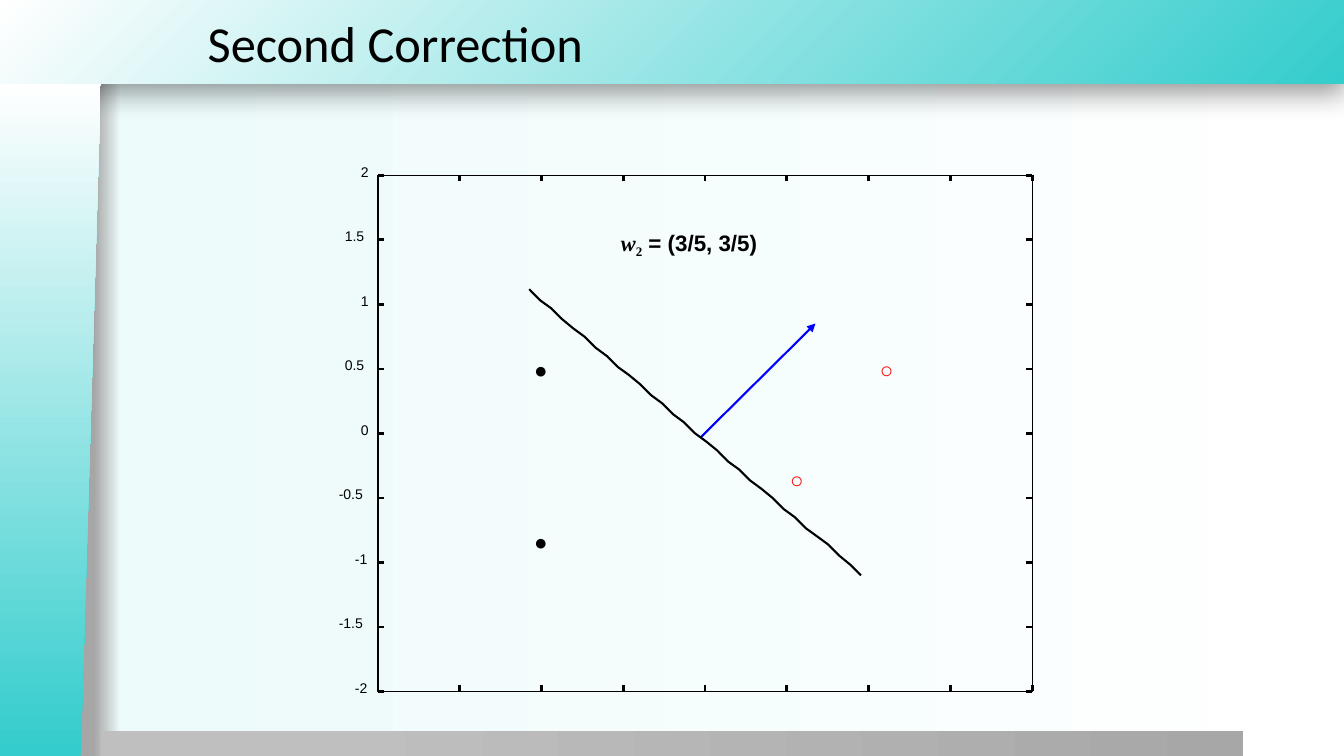
from dataclasses import dataclass

from lxml import etree
from pptx import Presentation
from pptx.dml.color import RGBColor
from pptx.enum.shapes import MSO_CONNECTOR, MSO_SHAPE
from pptx.enum.text import MSO_ANCHOR, MSO_AUTO_SIZE, PP_ALIGN
from pptx.oxml import parse_xml
from pptx.oxml.ns import nsdecls, qn
from pptx.util import Pt

RECT = MSO_SHAPE.RECTANGLE
MANUAL_INPUT = MSO_SHAPE.FLOWCHART_MANUAL_INPUT
STRAIGHT = MSO_CONNECTOR.STRAIGHT
MIDDLE = MSO_ANCHOR.MIDDLE
GROW = MSO_AUTO_SIZE.SHAPE_TO_FIT_TEXT
LEFT = PP_ALIGN.LEFT


@dataclass(frozen=True)
class Theme:
    teal: str = "34CCCC"
    pale: str = "EDFBFB"
    white: str = "FFFFFF"
    edge: str = "A6A6A6"
    foot_start: str = "BFBFBF"
    foot_end: str = "A7A7A7"
    black: str = "000000"
    blue: str = "0000FF"
    red: str = "FF0000"
    title_font: str = "Calibri"
    sans: str = "Arial"
    serif: str = "Times New Roman"
    title_size: int = 36
    body_size: int = 16
    tick_size: int = 10
    line: float = 1.5


T = Theme()
SLIDE_W, SLIDE_H = 960, 540
BANNER_H = 59.8
TICK = 4.3
# Heights of the decision line below the plot's top, at equal steps in x
BOUNDARY = [81.3, 89.3, 95, 102.9, 109.4, 115.2, 123.1, 128.9, 136.8, 142.5, 149,
            156.9, 162.7, 170.6, 176.4, 184.3, 190.1, 196.5, 204.5, 210.2, 218.1,
            223.9, 230.4, 238.3, 244.1, 252, 257.7, 263.5, 271.4, 277.9, 285.8]
MARKERS = [("●", 104.4, 125.3, T.black), ("●", 104.4, 248.4, T.black),
           ("○", 287.3, 203.8, T.red), ("○", 351.4, 125.3, T.red)]


def set_gradient(fill, parent, stops, shade='<a:lin ang="0" scaled="0"/>'):
    fill.gradient()
    old = parent.find(qn("a:gradFill"))
    gs = "".join(f'<a:gs pos="{pos * 1000}"><a:srgbClr val="{color}"/></a:gs>'
                 for pos, color in stops)
    parent.replace(old, parse_xml(
        f'<a:gradFill {nsdecls("a")} rotWithShape="1"><a:gsLst>{gs}</a:gsLst>{shade}</a:gradFill>'))


def add_panel(shapes, kind, box, stops, **shade):
    sp = shapes.add_shape(kind, *map(Pt, box))
    sp.shadow.inherit = False
    sp.line.fill.background()
    set_gradient(sp.fill, sp._element.spPr, stops, **shade)
    return sp


def add_line(shapes, x1, y1, x2, y2, color=T.black, width=0):
    line = shapes.add_connector(STRAIGHT, Pt(x1), Pt(y1), Pt(x2), Pt(y2))
    line.line.color.rgb = RGBColor.from_string(color)
    line.line.width = Pt(width)
    etree.SubElement(line._element.spPr, qn("a:effectLst"))
    return line


def format_run(r, font, size, color=T.black, bold=False, italic=False):
    r.font.name, r.font.size = font, Pt(size)
    r.font.bold, r.font.italic = bold, italic
    r.font.color.rgb = RGBColor.from_string(color)


def add_label(shapes, box, text, font, size, color=T.black, inset=(0, 0)):
    tb = shapes.add_textbox(*map(Pt, box))
    tf = tb.text_frame
    tf.word_wrap = False
    tf.auto_size = GROW
    tf.margin_left = tf.margin_right = Pt(inset[0])
    tf.margin_top = tf.margin_bottom = Pt(inset[1])
    p = tf.paragraphs[0]
    p.text = text
    format_run(p.runs[0], font, size, color)
    return p


def draw_frame(slide, x, y, w, h):
    shapes = slide.shapes
    # Background
    slide.background.fill.solid()
    bg = slide._element.cSld.find(qn("p:bg")).find(qn("p:bgPr"))
    set_gradient(slide.background.fill, bg, [(7, T.edge), (9, T.pale), (100, T.white)])
    # Top banner with its shadow
    fade = [(0, T.teal), (100, T.white)]
    banner = add_panel(
        shapes, RECT, (x, y, w, BANNER_H), fade,
        shade='<a:path path="circle"><a:fillToRect l="100000" t="100000"/></a:path>')
    effects = banner._element.spPr.find(qn("a:effectLst"))
    effects.append(parse_xml(
        f'<a:outerShdw {nsdecls("a")} blurRad="{Pt(20)}" dist="{Pt(6)}" dir="5400000" '
        'algn="t" rotWithShape="0"><a:srgbClr val="000000"><a:alpha val="40000"/>'
        '</a:srgbClr></a:outerShdw>'))
    # Footer bar
    add_panel(shapes, RECT, (x + 72, y + h - 18, w - 144, 18.5),
              [(20, T.foot_start), (100, T.foot_end)])
    # Side panel, turned upright
    side_w, side_h = 72, h - BANNER_H + 0.6
    side = add_panel(shapes, MANUAL_INPUT,
                     (x + (side_w - side_h) / 2, y + BANNER_H + (side_h - side_w) / 2,
                      side_h, side_w), [(1, T.teal), (100, T.white)])
    side.rotation = 270
    side._element.spPr.find(qn("a:xfrm")).set("flipV", "1")


def draw_axes(shapes, x, y, w, h):
    frame = shapes.add_shape(RECT, Pt(x), Pt(y), Pt(w), Pt(h))
    frame.shadow.inherit = False
    frame.fill.background()
    frame.line.color.rgb = RGBColor.from_string(T.black)
    frame.line.width = Pt(0)
    for i in range(9):
        tick_x, tick_y = x + w * i / 8, y + h * i / 8
        add_line(shapes, tick_x, y + h, tick_x, y + h - TICK)
        add_line(shapes, tick_x, y, tick_x, y + TICK)
        add_line(shapes, x, tick_y, x + TICK, tick_y)
        add_line(shapes, x + w, tick_y, x + w - TICK, tick_y)
        value = 2 - i / 2
        negative, decimal = value < 0, value % 1 != 0
        add_label(shapes, (x - 12.2 - 4.3 * negative - 11.5 * decimal, tick_y - 8.6,
                           5.6 + 3.3 * negative + 8.3 * decimal, 12.2),
                  f"{value:g}", T.sans, T.tick_size)


def draw_plot(slide, x, y, w, h):
    shapes = slide.shapes.add_group_shape().shapes
    draw_axes(shapes, x, y, w, h)
    # Weight vector
    arrow = add_line(shapes, x + 230.4, y + 187.2, x + 312.5, y + 105.8, T.blue, T.line)
    etree.SubElement(arrow.line._get_or_add_ln(), qn("a:tailEnd"), type="triangle")
    # Weight formula
    p = add_label(shapes, (x + 173.5, y + 38.2, 104.4, 19.4), "w", T.serif, T.body_size)
    format_run(p.runs[0], T.serif, T.body_size, bold=True, italic=True)
    for text, font in (("2", T.serif), (" = (3/5, 3/5)", T.sans)):
        r = p.add_run()
        r.text = text
        format_run(r, font, T.body_size, bold=True)
    p.runs[1].font._element.set("baseline", "-25000")
    # Decision line
    points = [(Pt(x + 108 + 7.9 * i), Pt(y + dy)) for i, dy in enumerate(BOUNDARY)]
    builder = shapes.build_freeform(*points[0])
    builder.add_line_segments(points[1:], close=False)
    boundary = builder.convert_to_shape()
    boundary.shadow.inherit = False
    boundary.fill.background()
    boundary.line.color.rgb = RGBColor.from_string(T.black)
    boundary.line.width = Pt(T.line)
    # Data points
    for mark, dx, dy, color in MARKERS:
        add_label(slide.shapes, (x + dx, y + dy, 31, 26.6), mark, T.serif,
                  T.body_size, color, inset=(7.2, 3.6))


def place_title(slide, x, y, w, h):
    title = slide.shapes.title
    title.left, title.top, title.width, title.height = map(Pt, (x, y, w, h))
    tf = title.text_frame
    tf.text = "Second Correction"
    tf.vertical_anchor = MIDDLE
    tf.paragraphs[0].alignment = LEFT
    format_run(tf.paragraphs[0].runs[0], T.title_font, T.title_size)
    slide.shapes._spTree.append(title._element)  # in front of the banner


def main():
    prs = Presentation()
    prs.slide_width, prs.slide_height = Pt(SLIDE_W), Pt(SLIDE_H)
    slide = prs.slides.add_slide(prs.slide_layouts[5])
    draw_frame(slide, 0, 0, SLIDE_W, SLIDE_H)
    draw_plot(slide, 270, 125.3, 467.3, 368.6)
    place_title(slide, 141.1, 0, SLIDE_W - 141.1, BANNER_H)
    prs.save("out.pptx")


if __name__ == "__main__":
    main()
